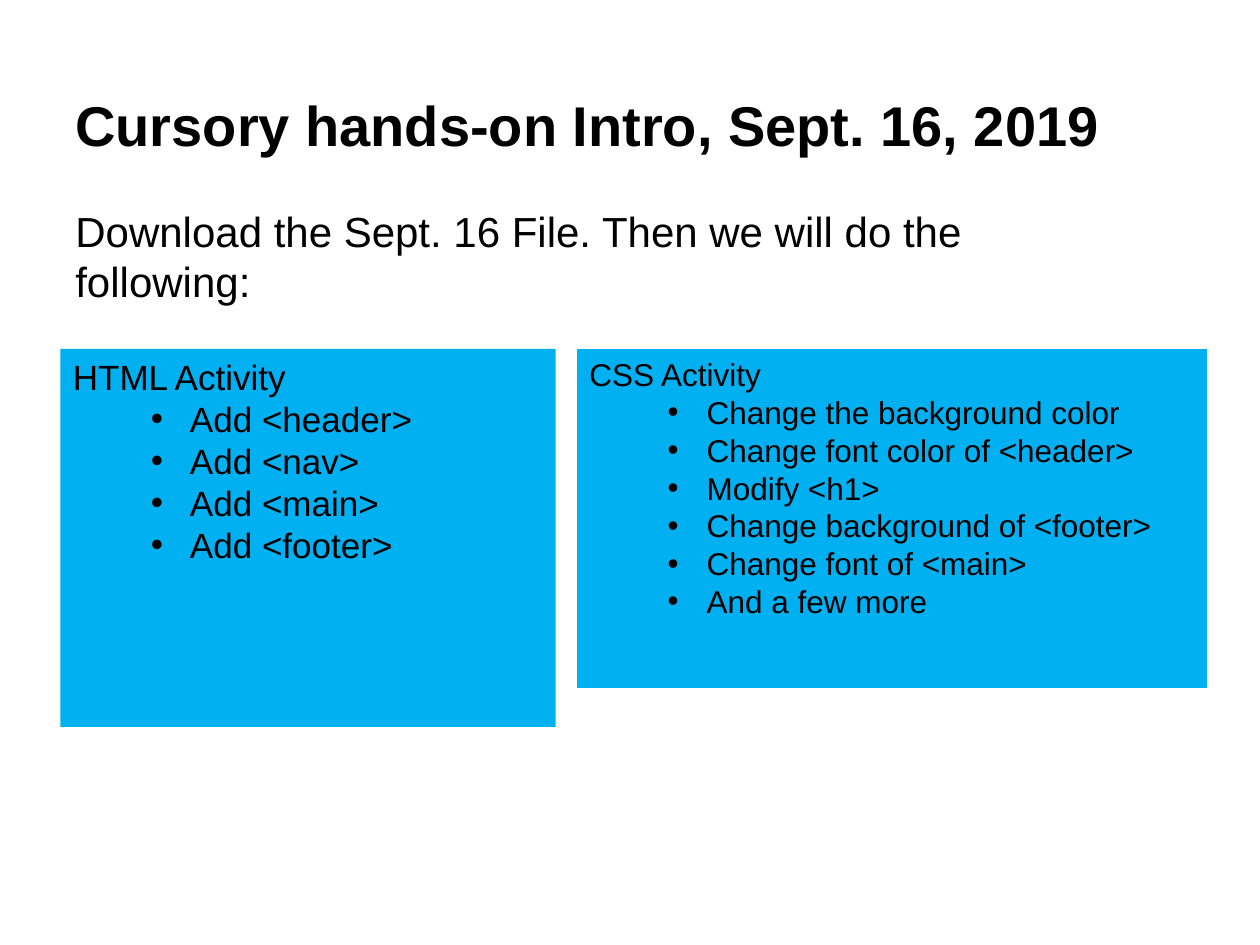
from dataclasses import dataclass

from lxml import etree
from pptx import Presentation
from pptx.dml.color import RGBColor
from pptx.enum.shapes import MSO_SHAPE
from pptx.enum.text import MSO_ANCHOR, PP_ALIGN
from pptx.oxml.ns import qn
from pptx.slide import Slide
from pptx.text.text import TextFrame, _Paragraph
from pptx.util import Inches, Pt

RECTANGLE = MSO_SHAPE.RECTANGLE
TOP = MSO_ANCHOR.TOP
LEFT = PP_ALIGN.LEFT

COLORS = {"text": "000000", "panel": "00B0F0"}
FONT = "Arial"
PANEL_TOP = 2.77
BULLET_MARGIN = 0.93
BULLET_HANG = 0.31


@dataclass
class Heading:
    text: str
    top: float
    width: float
    height: float
    size: int
    bold: bool = False


@dataclass
class Activity:
    title: str
    steps: list[str]
    left: float
    width: float
    height: float
    size: int


HEADINGS = [
    Heading("Cursory hands-on Intro, Sept. 16, 2019", 0.67, 8.83, 0.64, 32, True),
    Heading("Download the Sept. 16 File. Then we will do the following:",
            1.58, 8.5, 0.91, 24),
]

ACTIVITIES = [
    Activity("HTML Activity",
             [f"Add <{tag}>" for tag in ("header", "nav", "main", "footer")],
             0.48, 3.93, 3, 20),
    Activity("CSS Activity",
             ["Change the background color", "Change font color of <header>",
              "Modify <h1>", "Change background of <footer>",
              "Change font of <main>", "And a few more"],
             4.58, 5, 2.69, 18),
]


def format_text(frame: TextFrame, size: int, bold: bool = False) -> None:
    """Apply the shared text style to every run."""
    frame.word_wrap = True
    frame.vertical_anchor = TOP
    for paragraph in frame.paragraphs:
        paragraph.alignment = LEFT
        for run in paragraph.runs:
            run.font.name = FONT
            run.font.size = Pt(size)
            run.font.bold = bold
            run.font.color.rgb = RGBColor.from_string(COLORS["text"])


def add_bullet(paragraph: _Paragraph) -> None:
    """Give a paragraph a hanging round bullet."""
    properties = paragraph._p.get_or_add_pPr()
    properties.set("marL", str(Inches(BULLET_MARGIN)))
    properties.set("indent", str(-Inches(BULLET_HANG)))
    etree.SubElement(properties, qn("a:buFont"), typeface=FONT)
    etree.SubElement(properties, qn("a:buChar"), char="•")


def draw_heading(slide: Slide, heading: Heading) -> None:
    """Draw a line of introductory text."""
    box = slide.shapes.add_textbox(Inches(0.5), Inches(heading.top),
                                   Inches(heading.width), Inches(heading.height))
    box.text_frame.text = heading.text
    format_text(box.text_frame, heading.size, heading.bold)


def draw_activity(slide: Slide, activity: Activity) -> None:
    """Draw a filled panel with a title and its bulleted steps."""
    panel = slide.shapes.add_shape(RECTANGLE, Inches(activity.left), Inches(PANEL_TOP),
                                   Inches(activity.width), Inches(activity.height))
    panel.shadow.inherit = False
    panel.fill.solid()
    panel.fill.fore_color.rgb = RGBColor.from_string(COLORS["panel"])
    panel.line.fill.background()
    frame = panel.text_frame
    frame.text = "\n".join([activity.title, *activity.steps])
    for step in frame.paragraphs[1:]:
        add_bullet(step)
    format_text(frame, activity.size)


def main() -> None:
    """Build and save the slide."""
    presentation = Presentation()
    presentation.slide_width = Inches(10)
    presentation.slide_height = Inches(7.5)
    slide = presentation.slides.add_slide(presentation.slide_layouts[6])
    for heading in HEADINGS:
        draw_heading(slide, heading)
    for activity in ACTIVITIES:
        draw_activity(slide, activity)
    presentation.save("out.pptx")


if __name__ == "__main__":
    main()
